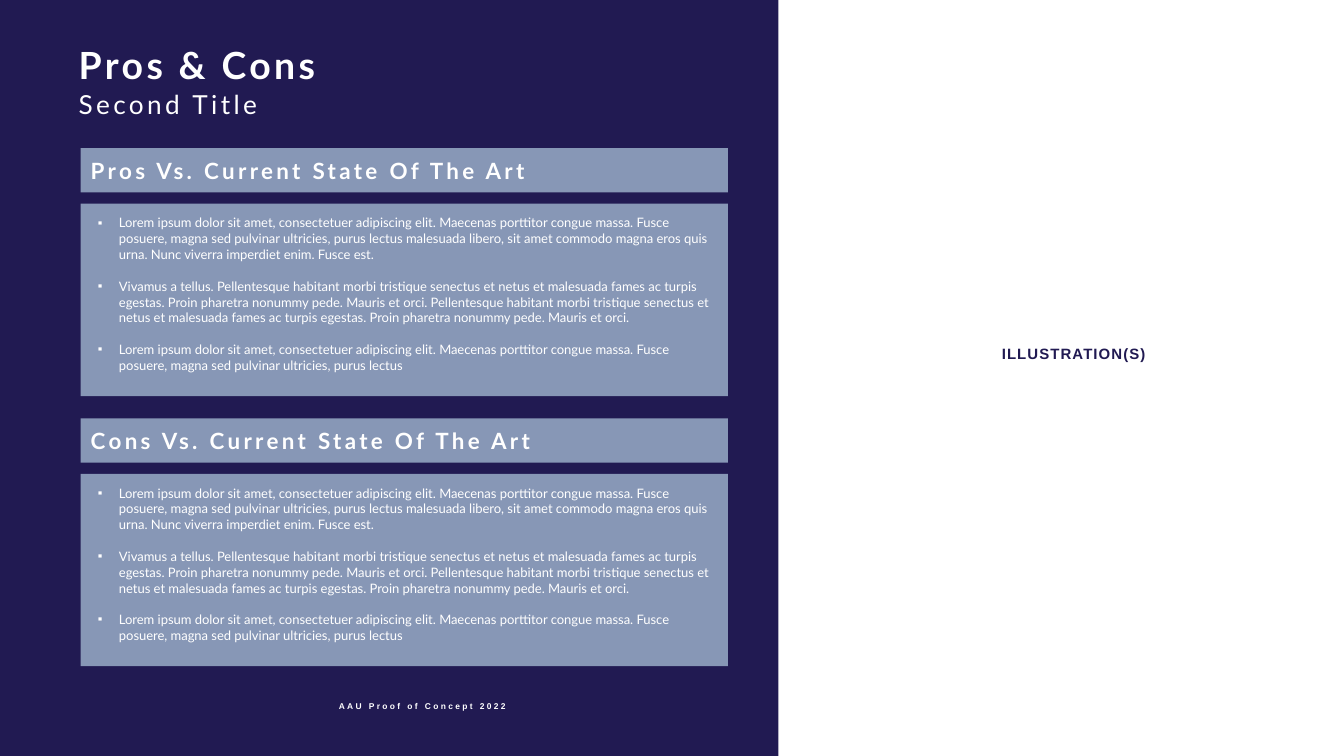
from lxml.etree import SubElement
from pptx import Presentation
from pptx.dml.color import RGBColor
from pptx.enum.shapes import MSO_SHAPE
from pptx.enum.text import MSO_ANCHOR, MSO_AUTO_SIZE, PP_ALIGN
from pptx.oxml.ns import qn
from pptx.util import Emu, Pt

NAVY = "211A52"
STEEL = "8797B6"
WHITE = "FFFFFF"

POINTS = [
    "Lorem ipsum dolor sit amet, consectetuer adipiscing elit. Maecenas porttitor congue massa. "
    "Fusce posuere, magna sed pulvinar ultricies, purus lectus malesuada libero, sit amet commodo "
    "magna eros quis urna. Nunc viverra imperdiet enim. Fusce est.",
    "Vivamus a tellus. Pellentesque habitant morbi tristique senectus et netus et malesuada fames "
    "ac turpis egestas. Proin pharetra nonummy pede. Mauris et orci. Pellentesque habitant morbi "
    "tristique senectus et netus et malesuada fames ac turpis egestas. Proin pharetra nonummy pede. "
    "Mauris et orci.",
    "Lorem ipsum dolor sit amet, consectetuer adipiscing elit. Maecenas porttitor congue massa. "
    "Fusce posuere, magna sed pulvinar ultricies, purus lectus",
]


def px(length):
    return Emu(length * 9144)


def color(value):
    return RGBColor.from_string(value)


class SlideBuilder:
    font_name = "Lato"
    list_size = 9.3
    list_leading = 11.3
    list_indent = 21

    def __init__(self, slide):
        self.slide = slide
        slide.background.fill.solid()
        slide.background.fill.fore_color.rgb = color(NAVY)

    def place(self, shape, box):
        shape.left, shape.top, shape.width, shape.height = map(px, box)
        self.slide.shapes.element.append(shape.element)

    def panel(self, box, fill):
        shape = self.slide.shapes.add_shape(MSO_SHAPE.RECTANGLE, *map(px, box))
        shape.shadow.inherit = False
        shape.fill.solid()
        shape.fill.fore_color.rgb = color(fill)
        shape.line.fill.background()

    def style_frame(self, frame, margins=(0, 0), wrap=True):
        frame.auto_size = MSO_AUTO_SIZE.NONE
        frame.word_wrap = wrap
        frame.vertical_anchor = MSO_ANCHOR.TOP
        frame.margin_left = frame.margin_right = px(margins[0])
        frame.margin_top = frame.margin_bottom = px(margins[1])

    def style_run(self, run, size, bold, ink, spacing, font_name):
        run.font.name = font_name or self.font_name
        run.font.size = Pt(size)
        run.font.bold = bold
        run.font.color.rgb = color(ink)
        run.font._element.set("spc", str(round(spacing * 100)))

    def line(self, shape, text, size, bold=True, ink=WHITE, spacing=2.4,
             font_name=None, align=PP_ALIGN.LEFT, wrap=True):
        frame = shape.text_frame
        frame.text = text
        self.style_frame(frame, wrap=wrap)
        paragraph = frame.paragraphs[0]
        paragraph.alignment = align
        paragraph.space_before = Pt(0)
        self.style_run(paragraph.runs[0], size, bold, ink, spacing, font_name)

    def heading(self, placeholder, box, text, size):
        self.place(placeholder, box)
        self.line(placeholder, text, size)

    def label(self, box, text, size, **style):
        self.line(self.slide.shapes.add_textbox(*map(px, box)), text, size, **style)

    def bullet_list(self, placeholder, box, items):
        self.place(placeholder, box)
        frame = placeholder.text_frame
        frame.text = "\n".join(items)
        self.style_frame(frame, margins=(10, 5))
        for index, paragraph in enumerate(frame.paragraphs):
            properties = paragraph._p.get_or_add_pPr()
            properties.set("marL", str(px(self.list_indent)))
            properties.set("indent", str(px(-self.list_indent)))
            SubElement(properties, qn("a:buFont")).set("typeface", "Arial")
            SubElement(properties, qn("a:buChar")).set("char", "▪")
            paragraph.line_spacing = Pt(self.list_leading)
            paragraph.space_before = Pt(self.list_leading if index else 0)
            self.style_run(paragraph.runs[0], self.list_size, False, WHITE, 0, None)

    def section(self, top, heading, items, heading_placeholder, list_placeholder):
        self.panel((80, top, 642, 44), STEEL)
        self.heading(heading_placeholder, (90, top + 9, 622, 27), heading, 16)
        self.panel((80, top + 55, 642, 191), STEEL)
        self.bullet_list(list_placeholder, (87, top + 61, 627, 164), items)


def main():
    presentation = Presentation()
    presentation.slide_width = px(1333)
    presentation.slide_height = px(750)
    comparison_layout = presentation.slide_layouts[4]
    slide = presentation.slides.add_slide(comparison_layout)
    title, *bodies = slide.placeholders
    builder = SlideBuilder(slide)

    builder.panel((772, 0, 561, 750), WHITE)
    builder.label((994, 342, 142, 18), "ILLUSTRATION(S)", 10.7, ink=NAVY, spacing=0.8,
                  font_name="Arial", align=PP_ALIGN.CENTER, wrap=False)
    builder.heading(title, (78, 42, 544, 45), "Pros & Cons", 26.7)
    builder.label((78, 88, 289, 31), "Second Title", 18.7, bold=False)
    for index, side in enumerate(("Pros", "Cons")):
        builder.section(147 + 268 * index, f"{side} Vs. Current State Of The Art", POINTS,
                        *bodies[2 * index:2 * index + 2])
    builder.label((336, 696, 199, 31), "AAU Proof of Concept 2022", 6, spacing=1.7,
                  font_name="Arial")

    presentation.save("out.pptx")


if __name__ == "__main__":
    main()
